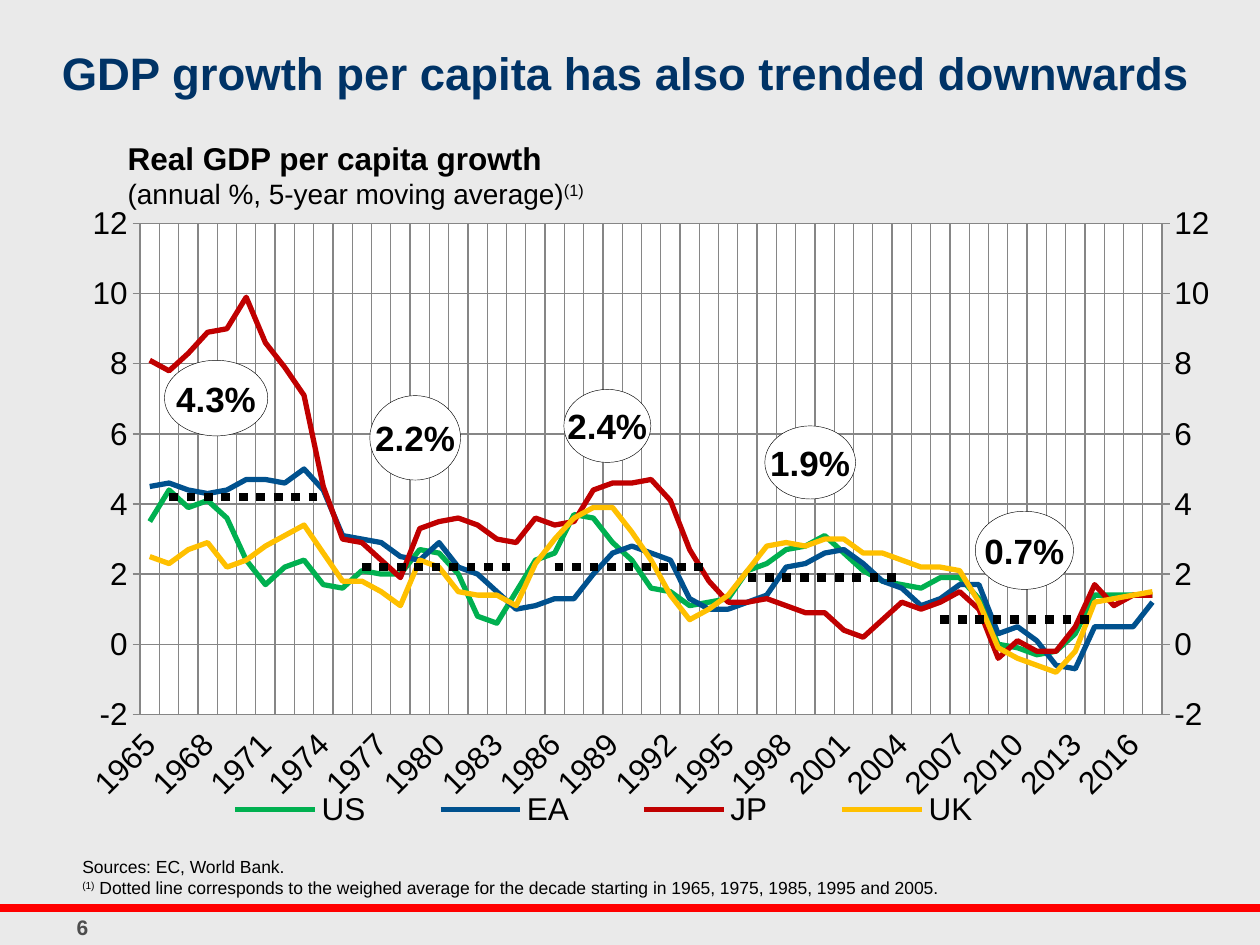
from copy import deepcopy
from lxml import etree
from pptx import Presentation
from pptx.chart.data import CategoryChartData
from pptx.dml.color import RGBColor
from pptx.enum.chart import XL_CHART_TYPE as ChartType, XL_LEGEND_POSITION as LegendPos
from pptx.enum.chart import XL_TICK_LABEL_POSITION as LabelPos, XL_TICK_MARK as Tick
from pptx.enum.dml import MSO_LINE_DASH_STYLE as Dash
from pptx.enum.shapes import MSO_CONNECTOR_TYPE as Connector, MSO_SHAPE as Shape
from pptx.enum.text import MSO_ANCHOR as Anchor, MSO_AUTO_SIZE as AutoSize, PP_ALIGN as Align
from pptx.oxml import parse_xml
from pptx.oxml.ns import nsdecls, qn
from pptx.util import Inches, Pt

COLORS = {name: RGBColor.from_string(value) for name, value in {
    "background": "EAEAEA", "title": "003366", "text": "000000", "white": "FFFFFF",
    "rule": "FF0000", "number": "4D4D4D", "grid": "868686",
    "US": "00B050", "EA": "00518E", "JP": "C00000", "UK": "FFC000", "Series 5": "000000",
}.items()}

deck = Presentation()
deck.slide_width, deck.slide_height = Inches(10), Inches(7.5)
slide = deck.slides.add_slide(deck.slide_layouts[5])
slide.background.fill.solid()
slide.background.fill.fore_color.rgb = COLORS["background"]


def share(left, top, width, height):
    across, down = deck.slide_width / 100, deck.slide_height / 100
    return int(left * across), int(top * down), int(width * across), int(height * down)


def write(frame, lines, color="text", align=Align.LEFT):
    for index, pieces in enumerate(lines):
        paragraph = frame.add_paragraph() if index else frame.paragraphs[0]
        paragraph.alignment = align
        for words, size, bold, raised in pieces:
            run = paragraph.add_run()
            run.text = words
            run.font.name, run.font.size, run.font.bold = "Arial", Pt(size), bold
            run.font.color.rgb = COLORS[color]
            if raised:
                run.font._element.set("baseline", "30000")


left, top, width, height = share(0, 96.13, 100, 0)
rule = slide.shapes.add_connector(Connector.STRAIGHT, left, top, left + width, top)
rule.line.color.rgb, rule.line.width = COLORS["rule"], Pt(4.5)
etree.SubElement(rule._element.spPr, qn("a:effectLst"))

page_number = slide.shapes.add_textbox(*share(2.15, 96.13, 8.8, 3.87)).text_frame
page_number.word_wrap = True
write(page_number, [[("6", 12, True, False)]], "number", Align.CENTER)

title = slide.shapes.title
title.left, title.top, title.width, title.height = share(3.9, 2.05, 94.6, 11.2)
title.text_frame.word_wrap = True
title.text_frame.auto_size = AutoSize.NONE
title.text_frame.vertical_anchor = Anchor.MIDDLE
write(title.text_frame, [[("GDP growth per capita has also trended downwards", 26, True, False)]], "title")

growth = {
    "US": [3.5, 4.4, 3.9, 4.1, 3.6, 2.4, 1.7, 2.2, 2.4, 1.7, 1.6, 2.1, 2, 2, 2.7, 2.6, 2, 0.8,
           0.6, 1.5, 2.4, 2.6, 3.7, 3.6, 2.9, 2.4, 1.6, 1.5, 1.1, 1.2, 1.3, 2.1, 2.3, 2.7, 2.8,
           3.1, 2.6, 2.1, 1.8, 1.7, 1.6, 1.9, 1.9, 1.3, 0, -0.1, -0.3, -0.2, 0.3, 1.4, 1.4, 1.4, 1.4],
    "EA": [4.5, 4.6, 4.4, 4.3, 4.4, 4.7, 4.7, 4.6, 5, 4.4, 3.1, 3, 2.9, 2.5, 2.4, 2.9, 2.2, 2,
           1.5, 1, 1.1, 1.3, 1.3, 2, 2.6, 2.8, 2.6, 2.4, 1.3, 1, 1, 1.2, 1.4, 2.2, 2.3,
           2.6, 2.7, 2.3, 1.8, 1.6, 1.1, 1.3, 1.7, 1.7, 0.3, 0.5, 0.1, -0.6, -0.7, 0.5, 0.5, 0.5, 1.2],
    "JP": [8.1, 7.8, 8.3, 8.9, 9, 9.9, 8.6, 7.9, 7.1, 4.5, 3, 2.9, 2.4, 1.9, 3.3, 3.5, 3.6, 3.4,
           3, 2.9, 3.6, 3.4, 3.5, 4.4, 4.6, 4.6, 4.7, 4.1, 2.7, 1.8, 1.2, 1.2, 1.3, 1.1, 0.9,
           0.9, 0.4, 0.2, 0.7, 1.2, 1, 1.2, 1.5, 1, -0.4, 0.1, -0.2, -0.2, 0.5, 1.7, 1.1, 1.4, 1.4],
    "UK": [2.5, 2.3, 2.7, 2.9, 2.2, 2.4, 2.8, 3.1, 3.4, 2.6, 1.8, 1.8, 1.5, 1.1, 2.4, 2.2, 1.5, 1.4,
           1.4, 1.1, 2.3, 3, 3.6, 3.9, 3.9, 3.2, 2.4, 1.4, 0.7, 1, 1.4, 2.1, 2.8, 2.9, 2.8,
           3, 3, 2.6, 2.6, 2.4, 2.2, 2.2, 2.1, 1.2, -0.1, -0.4, -0.6, -0.8, -0.2, 1.2, 1.3, 1.4, 1.5],
    "Series 5": [],
}
for decade_average in (4.2, 2.2, 2.2, 1.9, 0.7):
    growth["Series 5"] += [None] + [decade_average] * 9
growth["Series 5"] += [None, 1.1, None]

growth_data = CategoryChartData()
growth_data.categories = [str(year) for year in range(1965, 2018)]
for region, values in growth.items():
    growth_data.add_series(region, values)
chart = slide.shapes.add_chart(ChartType.LINE, *share(3.9, 21.65, 92.6, 67.2), growth_data).chart
chart.has_title = False
chart.font.name, chart.font.size = "Arial", Pt(18)
chart.font.color.rgb = COLORS["text"]
chart.plots[0].vary_by_categories = False
for series in chart.plots[0].series:
    dotted = series.name == "Series 5"
    series.smooth = False
    series.format.line.color.rgb = COLORS[series.name]
    series.format.line.width = Pt(5 if dotted else 3)
    if dotted:
        series.format.line.dash_style = Dash.ROUND_DOT

years, percent = chart.category_axis, chart.value_axis
for axis in (years, percent):
    axis.has_major_gridlines = True
    axis.major_tick_mark, axis.minor_tick_mark = Tick.OUTSIDE, Tick.NONE
    for line in (axis.format.line, axis.major_gridlines.format.line):
        line.color.rgb, line.width = COLORS["grid"], Pt(0.75)
years.tick_label_position = LabelPos.LOW
years.tick_labels.font.size = Pt(18)
years._element.find(qn("c:txPr")).find(qn("a:bodyPr")).set("rot", "-2700000")
for tag, step in (("tickLblSkip", 3), ("tickMarkSkip", 1)):
    skip = parse_xml(f'<c:{tag} {nsdecls("c")} val="{step}"/>')
    years._element.find(qn("c:noMultiLvlLbl")).addprevious(skip)
percent.minimum_scale, percent.maximum_scale, percent.major_unit = -2, 12, 2
percent.tick_labels.number_format = "General"
percent.tick_labels.number_format_is_linked = False

left_lines = chart.plots[0]._element
right_lines = deepcopy(left_lines)
left_lines.addnext(right_lines)
for lines, unwanted in ((left_lines, slice(3, 5)), (right_lines, slice(0, 3))):
    for series in lines.findall(qn("c:ser"))[unwanted]:
        lines.remove(series)
right_years, right_percent = deepcopy(years._element), deepcopy(percent._element)
percent._element.addnext(right_percent)
right_percent.addnext(right_years)
for axis in (right_years, right_percent):
    axis.remove(axis.find(qn("c:majorGridlines")))
for axis, other, number in ((right_years, right_percent, "5001"), (right_percent, right_years, "5002")):
    axis.find(qn("c:axId")).set("val", number)
    other.find(qn("c:crossAx")).set("val", number)
for axis_id, number in zip(right_lines.findall(qn("c:axId")), ("5001", "5002")):
    axis_id.set("val", number)
right_years.find(qn("c:delete")).set("val", "1")
right_percent.find(qn("c:axPos")).set("val", "r")
right_percent.find(qn("c:crosses")).set("val", "max")

chart.has_legend = True
chart.legend.position = LegendPos.RIGHT
chart.legend.include_in_layout = False
plot_area, legend = left_lines.getparent(), chart.legend._element
for part, area, inner in ((plot_area, (0.078, 0.03, 0.876, 0.773), '<c:layoutTarget val="inner"/>'),
                          (legend, (0.104, 0.918, 0.743, 0.07), "")):
    for stale in part.findall(qn("c:layout")):
        part.remove(stale)
    edges = "".join(f'<c:{edge} val="{value}"/>' for edge, value in zip("xywh", area))
    part.insert(0 if inner else 1, parse_xml(
        f'<c:layout {nsdecls("c")}><c:manualLayout>{inner}<c:xMode val="edge"/>'
        f'<c:yMode val="edge"/>{edges}</c:manualLayout></c:layout>'))
legend.insert(1, parse_xml(
    f'<c:legendEntry {nsdecls("c")}><c:idx val="4"/><c:delete val="1"/></c:legendEntry>'))
plot_area.append(parse_xml(
    f'<c:spPr {nsdecls("c", "a")}><a:solidFill><a:srgbClr val="{COLORS["white"]}"/></a:solidFill></c:spPr>'))

captions = [
    ((9.15, 14.03, 83.1, 8.93), [
        [("Real GDP per capita growth", 18, True, False)],
        [("(annual %, 5-year moving average)", 16, False, False), ("(1)", 16, False, True)]]),
    ((5.55, 89.97, 81, 5.87), [
        [("Sources: EC, World Bank.", 10, False, False)],
        [("(1)", 10, False, True),
         (" Dotted line corresponds to the weighed average for the decade starting in "
          "1965, 1975, 1985, 1995 and 2005.", 10, False, False)]]),
]
for place, lines in captions:
    caption = slide.shapes.add_textbox(*share(*place)).text_frame
    caption.word_wrap = True
    write(caption, lines)

averages = {
    "2.2%": (29.35, 41.87, 7.2, 8.93),
    "4.3%": (13.05, 38.13, 8.2, 8),
    "2.4%": (44.75, 41.2, 6.9, 7.73),
    "1.9%": (60.7, 45.07, 7.2, 7.73),
    "0.7%": (77.4, 54.1, 7.8, 8.27),
}
for average, place in averages.items():
    bubble = slide.shapes.add_shape(Shape.OVAL, *share(*place))
    bubble.shadow.inherit = False
    bubble.fill.solid()
    bubble.fill.fore_color.rgb = COLORS["white"]
    bubble.line.color.rgb, bubble.line.width = COLORS["text"], Pt(0.25)
    bubble.text_frame.word_wrap = False
    bubble.text_frame.vertical_anchor = Anchor.MIDDLE
    write(bubble.text_frame, [[(average, 20, True, False)]], align=Align.CENTER)

deck.save("out.pptx")
